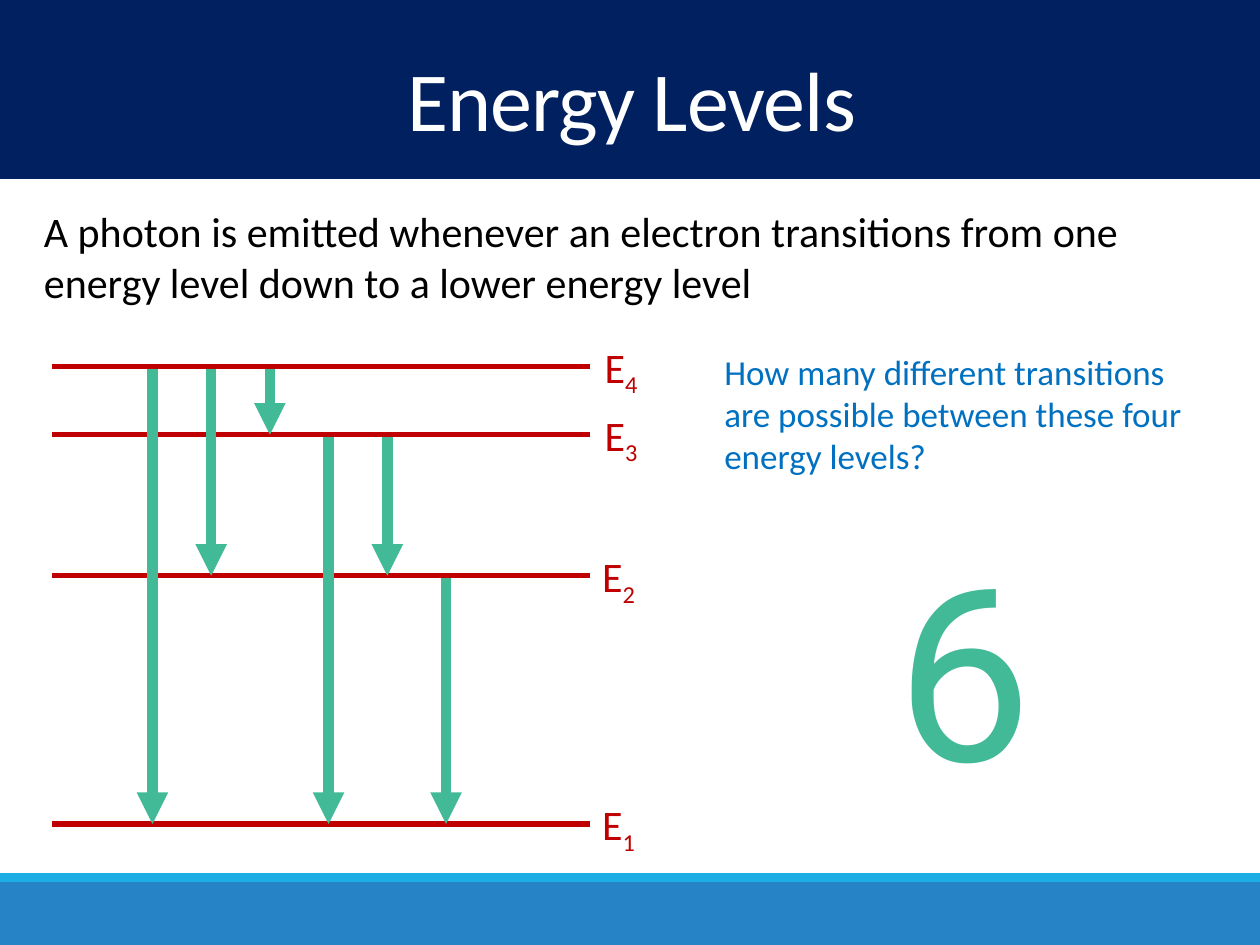
from lxml.etree import SubElement
from pptx import Presentation
from pptx.dml.color import RGBColor
from pptx.enum.shapes import MSO_CONNECTOR, MSO_SHAPE
from pptx.enum.text import MSO_ANCHOR, MSO_AUTO_SIZE, PP_ALIGN
from pptx.oxml.ns import qn
from pptx.util import Inches, Pt

NAVY, RED, GREEN, BLUE = "002060", "C00000", "42BA97", "0070C0"

deck = Presentation()
deck.slide_width, deck.slide_height = Inches(10), Inches(7.5)
slide = deck.slides.add_slide(deck.slide_layouts[6])

# All lengths are in hundredths of the slide's width (COL) and height (ROW).
COL, ROW = deck.slide_width / 100, deck.slide_height / 100


def write(text, left, top, width, height, size, color, font="Calibri",
          subscript="", wrap=True, grow=True, align=None, anchor=MSO_ANCHOR.TOP,
          line_spacing=None, tracking=None):
    """Add a text box; tracking is in hundredths of a point."""
    box = slide.shapes.add_textbox(int(left * COL), int(top * ROW),
                                   int(width * COL), int(height * ROW))
    frame = box.text_frame
    frame.word_wrap = wrap
    frame.auto_size = MSO_AUTO_SIZE.SHAPE_TO_FIT_TEXT if grow else MSO_AUTO_SIZE.NONE
    frame.vertical_anchor = anchor
    paragraph = frame.paragraphs[0]
    paragraph.alignment = align
    paragraph.line_spacing = line_spacing
    for part, baseline in ((text, None), (subscript, "-25000")):
        if not part:
            continue
        run = paragraph.add_run()
        run.text = part
        run.font.size = Pt(size)
        run.font.name = font
        run.font.color.rgb = RGBColor.from_string(color)
        properties = run._r.get_or_add_rPr()
        if baseline:
            properties.set("baseline", baseline)
        if tracking:
            properties.set("spc", str(tracking))


def draw_line(x1, y1, x2, y2, color, weight, arrow=False):
    line = slide.shapes.add_connector(
        MSO_CONNECTOR.STRAIGHT,
        int(x1 * COL), int(y1 * ROW), int(x2 * COL), int(y2 * ROW))
    line.line.color.rgb = RGBColor.from_string(color)
    line.line.width = Pt(weight)
    if arrow:
        SubElement(line.line._get_or_add_ln(), qn("a:tailEnd"), type="triangle")
    SubElement(line._element.spPr, qn("a:effectLst"))


# Header and footer bands
for top, height, color in ((93.33, 6.67, "2683C6"), (92.4, 0.93, "1CADE4"), (0, 18.95, NAVY)):
    band = slide.shapes.add_shape(MSO_SHAPE.RECTANGLE, 0, int(top * ROW),
                                  deck.slide_width, int(height * ROW))
    band.shadow.inherit = False
    band.fill.solid()
    band.fill.fore_color.rgb = RGBColor.from_string(color)
    band.line.fill.background()

write("Energy Levels", 0.3, 5.6, 99.7, 11.2, 48, "FFFFFF", grow=False,
      align=PP_ALIGN.CENTER, anchor=MSO_ANCHOR.MIDDLE, line_spacing=0.85, tracking=-50)
write("A photon is emitted whenever an electron transitions from one energy level "
      "down to a lower energy level", 2.5, 21.1, 95.1, 12.1, 24, "000000")
write("How many different transitions are possible between these four energy levels?",
      56.5, 36.4, 39.8, 14.8, 20, BLUE)
write("6", 70.2, 54.4, 12.5, 32.3, 138, GREEN, font="Roboto", wrap=False)

# Energy levels: height of the line, then left and top of its label
levels = {
    1: (87.2, 46.8, 83.87),
    2: (60.93, 46.8, 57.6),
    3: (46, 47, 42.67),
    4: (38.8, 47, 35.47),
}
first_arrow, arrow_gap = 12.1, 4.66
transitions = [(upper, lower) for upper in (4, 3, 2) for lower in range(1, upper)]

# Each level covers the tails of the arrows that start from it
for level, (level_y, label_left, label_top) in levels.items():
    for column, (upper, lower) in enumerate(transitions):
        if upper == level:
            arrow_x = first_arrow + column * arrow_gap
            draw_line(arrow_x, level_y, arrow_x, levels[lower][0], GREEN, 6, arrow=True)
    draw_line(4.1, level_y, 46.8, level_y, RED, 3)
    write("E", label_left, label_top, 4.8, 6.67, 24, RED, subscript=str(level), wrap=False)

deck.save("out.pptx")
